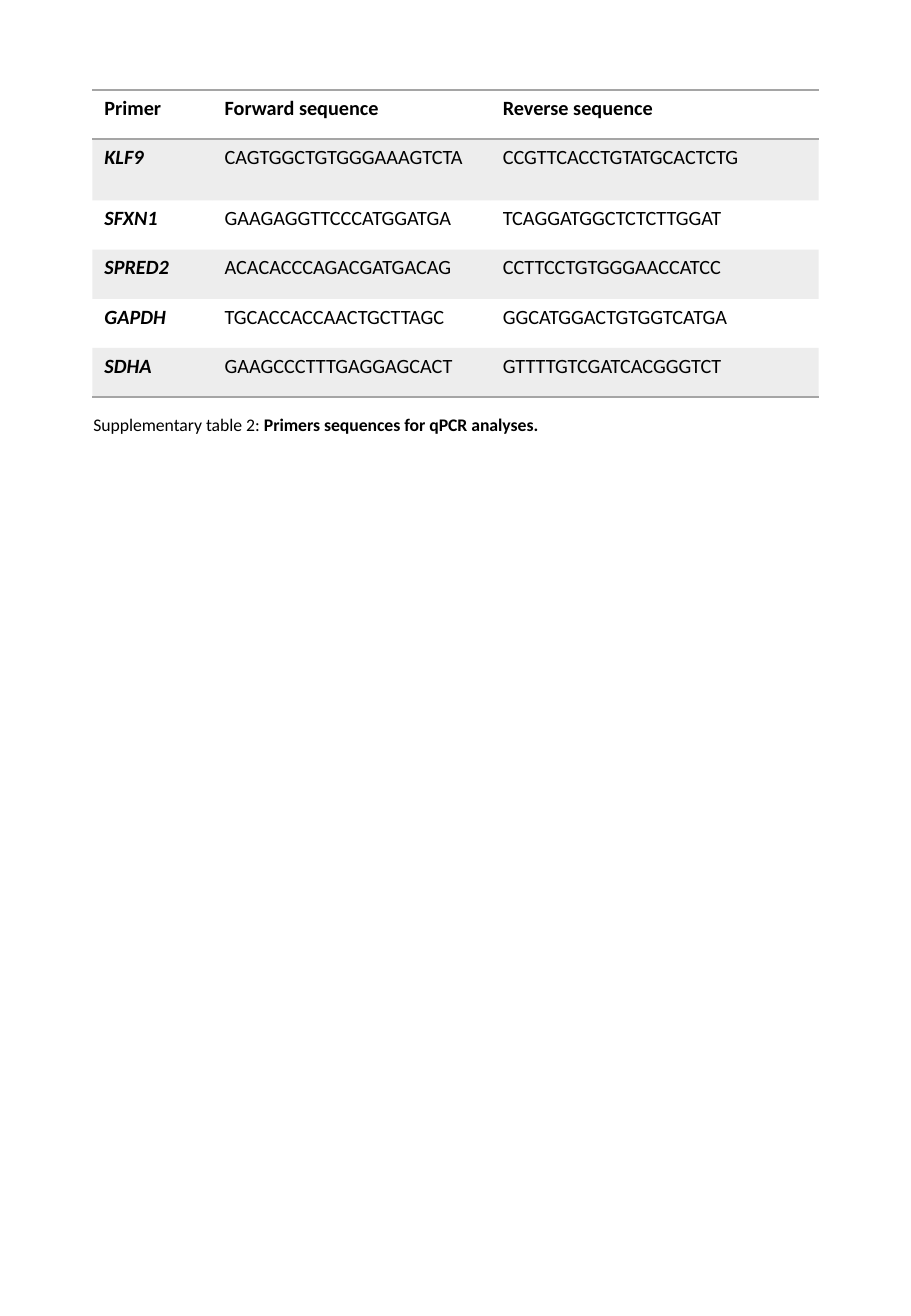
from dataclasses import dataclass

from lxml.etree import SubElement
from pptx import Presentation
from pptx.dml.color import RGBColor as Rgb
from pptx.oxml.ns import qn
from pptx.util import Emu, Pt

EMU_PER_PX = 4572
COLORS = {"text": "000000", "rule": "A5A5A5", "band": "A5A5A5"}
FONT = "Calibri"
BAND_ALPHA = 20000
NO_GRID_STYLE = "{2D5ABB26-0587-4C30-8999-92F81FD0307C}"
HEADINGS = ("Primer", "Forward sequence", "Reverse sequence")
COLUMN_WIDTHS = (198, 458, 540)
ROW_HEIGHT, TALL_ROW_HEIGHT = 81, 101


@dataclass(frozen=True)
class Primer:
    gene: str
    forward: str
    reverse: str
    height: int = ROW_HEIGHT


PRIMERS = (
    Primer("KLF9", "CAGTGGCTGTGGGAAAGTCTA", "CCGTTCACCTGTATGCACTCTG", TALL_ROW_HEIGHT),
    Primer("SFXN1", "GAAGAGGTTCCCATGGATGA", "TCAGGATGGCTCTCTTGGAT"),
    Primer("SPRED2", "ACACACCCAGACGATGACAG", "CCTTCCTGTGGGAACCATCC"),
    Primer("GAPDH", "TGCACCACCAACTGCTTAGC", "GGCATGGACTGTGGTCATGA"),
    Primer("SDHA", "GAAGCCCTTTGAGGAGCACT", "GTTTTGTCGATCACGGGTCT"),
)


def px(length: int) -> Emu:
    return Emu(length * EMU_PER_PX)


def add_text(paragraph, text: str, size: float, bold: bool = False, italic: bool = False) -> None:
    run = paragraph.add_run()
    run.text = text
    for attribute, value in {"name": FONT, "size": Pt(size), "bold": bold, "italic": italic}.items():
        setattr(run.font, attribute, value)
    run.font.color.rgb = Rgb.from_string(COLORS["text"])


def add_rule(cell, side: str) -> None:
    rule = SubElement(cell._tc.get_or_add_tcPr(), qn(f"a:ln{side}"), w=str(Pt(1)))
    fill = SubElement(rule, qn("a:solidFill"))
    SubElement(fill, qn("a:srgbClr"), val=COLORS["rule"])


def fill_band(cell) -> None:
    cell.fill.solid()
    cell.fill.fore_color.rgb = Rgb.from_string(COLORS["band"])
    color = cell._tc.tcPr.find(f"{qn('a:solidFill')}/{qn('a:srgbClr')}")
    SubElement(color, qn("a:alpha"), val=str(BAND_ALPHA))


def add_primer_table(slide) -> None:
    rows = [HEADINGS] + [(primer.gene, primer.forward, primer.reverse) for primer in PRIMERS]
    heights = [ROW_HEIGHT] + [primer.height for primer in PRIMERS]
    frame = slide.shapes.add_table(
        len(rows), len(HEADINGS), px(152), px(148), px(sum(COLUMN_WIDTHS)), px(sum(heights))
    )
    table = frame.table
    table.first_row = table.horz_banding = False
    table._tbl.tblPr.find(qn("a:tableStyleId")).text = NO_GRID_STYLE
    for column, width in zip(table.columns, COLUMN_WIDTHS):
        column.width = px(width)
    rules = {0: "TB", len(rows) - 1: "B"}
    for row_index, (texts, height) in enumerate(zip(rows, heights)):
        table.rows[row_index].height = px(height)
        for column_index, text in enumerate(texts):
            cell = table.cell(row_index, column_index)
            is_heading, is_gene = row_index == 0, column_index == 0
            add_text(cell.text_frame.paragraphs[0], text, 12, is_heading or is_gene, is_gene and not is_heading)
            for side in rules.get(row_index, ""):
                add_rule(cell, side)
            if row_index % 2:
                fill_band(cell)
            else:
                cell.fill.background()


def add_caption(slide) -> None:
    caption = slide.shapes.add_textbox(px(134), px(654), px(1340), px(68)).text_frame
    caption.word_wrap = True
    paragraph = caption.paragraphs[0]
    paragraph.line_spacing = 1.5
    add_text(paragraph, "Supplementary table 2: ", 10.5)
    add_text(paragraph, "Primers sequences for qPCR analyses.", 10.5, bold=True)


def main() -> None:
    deck = Presentation()
    deck.slide_width, deck.slide_height = px(1500), px(2166)
    slide = deck.slides.add_slide(deck.slide_layouts[6])
    add_primer_table(slide)
    add_caption(slide)
    deck.save("out.pptx")


if __name__ == "__main__":
    main()
